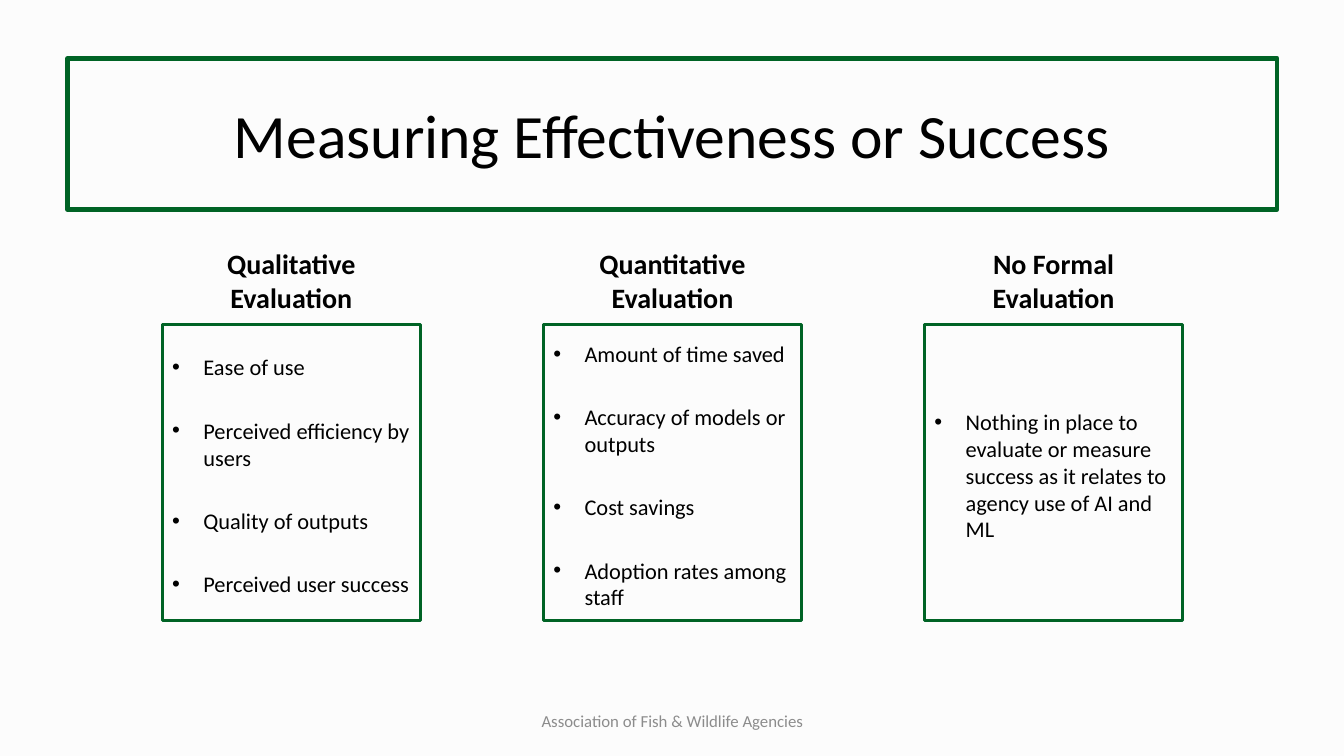
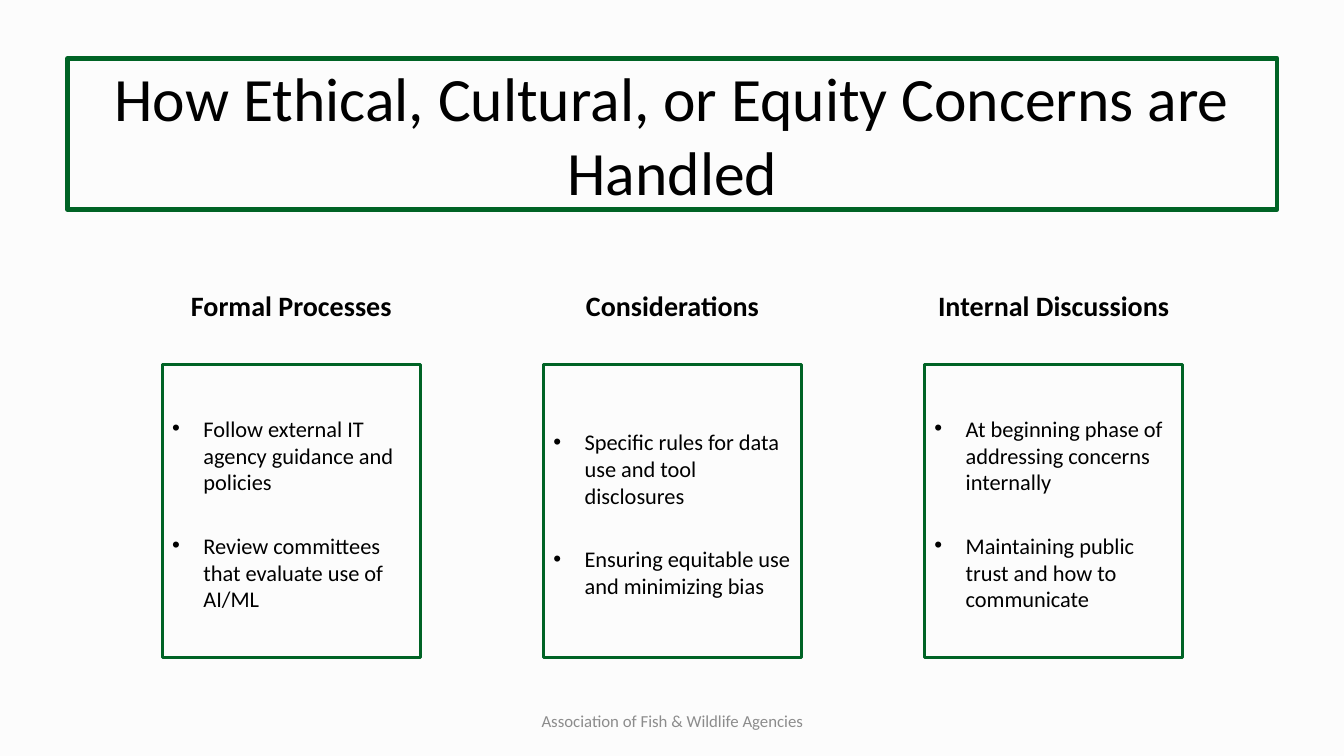
from pptx import Presentation
from pptx.dml.color import RGBColor
from pptx.enum import shapes, text
from pptx.oxml.ns import qn
from pptx.util import Inches, Pt
from lxml import etree

FONT = "Calibri"
BACKGROUND, GREEN, BLACK, GRAY = "FCFCFC", "006325", "000000", "8C8C8C"
FOOTER = "Association of Fish & Wildlife Agencies"
COLUMN_LEFT, COLUMN_STEP, COLUMN_WIDTH = 1.61, 3.78, 2.56
BULLET_INDENT = Inches(0.31)

SLIDES = [
    {
        "title": "Measuring Effectiveness or Success",
        "heading_top": 2.4, "box_top": 3.22, "box_height": 2.94,
        "columns": [
            ("Qualitative Evaluation", [
                "Ease of use",
                "Perceived efficiency by users",
                "Quality of outputs",
                "Perceived user success",
            ]),
            ("Quantitative Evaluation", [
                "Amount of time saved",
                "Accuracy of models or outputs",
                "Cost savings",
                "Adoption rates among staff",
            ]),
            ("No Formal Evaluation", [
                "Nothing in place to evaluate or measure success "
                "as it relates to agency use of AI and ML",
            ]),
        ],
    },
    {
        "title": "How Ethical, Cultural, or Equity Concerns are Handled",
        "heading_top": 2.81, "box_top": 3.62, "box_height": 2.9,
        "columns": [
            ("Formal Processes", [
                "Follow external IT agency guidance and policies",
                "Review committees that evaluate use of AI/ML",
            ]),
            ("Considerations", [
                "Specific rules for data use and tool disclosures",
                "Ensuring equitable use and minimizing bias",
            ]),
            ("Internal Discussions", [
                "At beginning phase of addressing concerns internally",
                "Maintaining public trust and how to communicate",
            ]),
        ],
    },
]


def color(value):
    return RGBColor.from_string(value)


def add_run(paragraph, words, size, ink=BLACK, bold=False):
    run = paragraph.add_run()
    run.text = words
    run.font.name = FONT
    run.font.size = Pt(size)
    run.font.bold = bold
    run.font.color.rgb = color(ink)


def add_label(slide, words, place, size, ink=BLACK, bold=False,
              anchor=text.MSO_ANCHOR.MIDDLE):
    """Add centred text without an outline."""
    label = slide.shapes.add_textbox(*map(Inches, place))
    frame = label.text_frame
    frame.word_wrap = True
    frame.vertical_anchor = anchor
    paragraph = frame.paragraphs[0]
    paragraph.alignment = text.PP_ALIGN.CENTER
    add_run(paragraph, words, size, ink, bold)


def add_outlined_box(slide, place, line_width):
    """Add an unfilled green frame and return its text frame."""
    box = slide.shapes.add_shape(shapes.MSO_SHAPE.RECTANGLE, *map(Inches, place))
    box.shadow.inherit = False
    box.fill.background()
    box.line.color.rgb = color(GREEN)
    box.line.width = Pt(line_width)
    box.text_frame.word_wrap = True
    box.text_frame.vertical_anchor = text.MSO_ANCHOR.MIDDLE
    return box.text_frame


def add_bullets(frame, items):
    frame.margin_top = Inches(0.1)
    for index, item in enumerate(items):
        paragraph = frame.add_paragraph() if index else frame.paragraphs[0]
        paragraph.alignment = text.PP_ALIGN.LEFT
        paragraph.space_before = Pt(26 if index else 0)
        properties = paragraph._p.get_or_add_pPr()
        properties.set("marL", str(BULLET_INDENT))
        properties.set("indent", str(-BULLET_INDENT))
        etree.SubElement(properties, qn("a:buFont")).set("typeface", "Arial")
        etree.SubElement(properties, qn("a:buChar")).set("char", "•")
        add_run(paragraph, item, 16)


def add_base_slide(presentation, title):
    """Add a slide with the shared background, footer and title frame."""
    slide = presentation.slides.add_slide(presentation.slide_layouts[6])
    slide.background.fill.solid()
    slide.background.fill.fore_color.rgb = color(BACKGROUND)
    add_label(slide, FOOTER, (4.56, 6.95, 4.22, 0.4), 12, GRAY)
    frame = add_outlined_box(slide, (0.67, 0.58, 12, 1.5), 3)
    frame.paragraphs[0].alignment = text.PP_ALIGN.CENTER
    add_run(frame.paragraphs[0], title, 44)
    return slide


def main():
    presentation = Presentation()
    presentation.slide_width = Inches(13.33)
    presentation.slide_height = Inches(7.5)
    for content in SLIDES:
        slide = add_base_slide(presentation, content["title"])
        for index, (heading, items) in enumerate(content["columns"]):
            left = COLUMN_LEFT + index * COLUMN_STEP
            add_label(slide, heading,
                      (left, content["heading_top"], COLUMN_WIDTH, 0.42),
                      20, bold=True, anchor=text.MSO_ANCHOR.TOP)
            frame = add_outlined_box(
                slide,
                (left, content["box_top"], COLUMN_WIDTH, content["box_height"]),
                2.25)
            add_bullets(frame, items)
    presentation.save("out.pptx")


if __name__ == "__main__":
    main()
